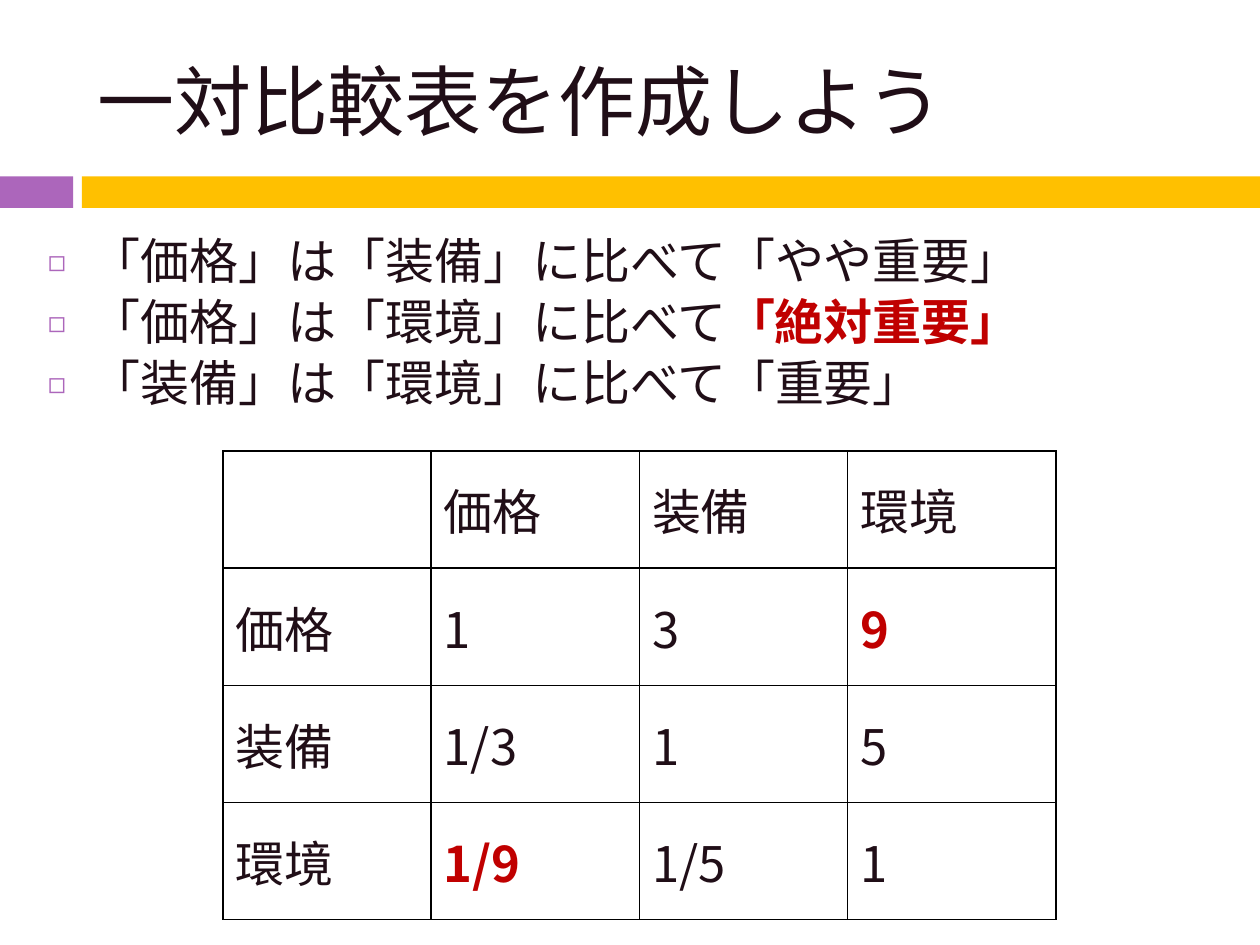
from lxml import etree
from pptx import Presentation
from pptx.dml.color import RGBColor
from pptx.enum.shapes import MSO_SHAPE
from pptx.enum.text import MSO_ANCHOR, MSO_AUTO_SIZE, PP_ALIGN
from pptx.oxml.ns import qn
from pptx.util import Inches, Pt

RECTANGLE = MSO_SHAPE.RECTANGLE
MIDDLE, TOP = MSO_ANCHOR.MIDDLE, MSO_ANCHOR.TOP
NO_AUTOFIT = MSO_AUTO_SIZE.NONE
LEFT = PP_ALIGN.LEFT
FONT = "Noto Sans CJK JP"
COLORS = {"text": "200E17", "emphasis": "C00000", "purple": "AC66BB",
          "gold": "FFC000", "border": "000000"}
TITLE = "一対比較表を作成しよう"
# Each statement is a plain part and an emphasised part.
STATEMENTS = [
    ("「価格」は「装備」に比べて「やや重要」", ""),
    ("「価格」は「環境」に比べて", "「絶対重要」"),
    ("「装備」は「環境」に比べて「重要」", ""),
]
COMPARISONS = [
    ["", "価格", "装備", "環境"],
    ["価格", "1", "3", "9"],
    ["装備", "1/3", "1", "5"],
    ["環境", "1/9", "1/5", "1"],
]
EMPHASISED_VALUES = {"9", "1/9"}


def set_format(target, values):
    for name, value in values.items():
        setattr(target, name, value)


def add_child(parent, tag, **attributes):
    return etree.SubElement(parent, qn(tag), attributes)


def place(shape, left, top, width, height):
    set_format(shape, {"left": Inches(left), "top": Inches(top),
                       "width": Inches(width), "height": Inches(height)})


def add_run(paragraph, text, size, emphasised=False):
    run = paragraph.add_run()
    run.text = text
    set_format(run.font, {"name": FONT, "size": Pt(size), "bold": emphasised})
    color = COLORS["emphasis" if emphasised else "text"]
    run.font.color.rgb = RGBColor.from_string(color)
    add_child(run.font._element, "a:ea", typeface=FONT)


def add_bar(slide, left, width, color):
    bar = slide.shapes.add_shape(RECTANGLE, Inches(left), Inches(1.4),
                                 Inches(width), Inches(0.25))
    bar.shadow.inherit = False
    bar.fill.solid()
    bar.fill.fore_color.rgb = RGBColor.from_string(color)
    bar.line.fill.background()


def fill_title(title):
    place(title, 0.67, 0.25, 8.92, 1.08)
    set_format(title.text_frame, {"vertical_anchor": MIDDLE,
                                  "auto_size": NO_AUTOFIT, "word_wrap": True})
    paragraph = title.text_frame.paragraphs[0]
    paragraph.alignment = LEFT
    add_run(paragraph, TITLE, 44)


def set_bullet(paragraph):
    properties = paragraph._p.get_or_add_pPr()
    properties.set("marL", str(Inches(0.35)))
    properties.set("indent", str(-Inches(0.35)))
    bullet_color = add_child(properties, "a:buClr")
    add_child(bullet_color, "a:srgbClr", val=COLORS["purple"])
    add_child(properties, "a:buSzPct", val="60000")
    add_child(properties, "a:buFont", typeface=FONT)
    add_child(properties, "a:buChar", char="◻")


def fill_statements(body):
    place(body, 0.28, 1.86, 9.45, 5.43)
    frame = body.text_frame
    set_format(frame, {"vertical_anchor": TOP, "auto_size": NO_AUTOFIT,
                       "word_wrap": True})
    for index, parts in enumerate(STATEMENTS):
        paragraph = frame.add_paragraph() if index else frame.paragraphs[0]
        set_format(paragraph, {"space_before": Pt(7), "line_spacing": 0.83})
        set_bullet(paragraph)
        for text, emphasised in zip(parts, (False, True)):
            if text:
                add_run(paragraph, text, 28, emphasised)


def set_borders(cell):
    properties = cell._tc.get_or_add_tcPr()
    for position, side in enumerate(("a:lnL", "a:lnR", "a:lnT", "a:lnB")):
        line = etree.Element(qn(side), w=str(Pt(1)))
        fill = add_child(line, "a:solidFill")
        add_child(fill, "a:srgbClr", val=COLORS["border"])
        properties.insert(position, line)


def add_comparison_table(slide):
    count = len(COMPARISONS)
    table = slide.shapes.add_table(count, count, Inches(1.77), Inches(3.58),
                                   Inches(6.61), Inches(3.72)).table
    set_format(table, {"first_row": False, "horz_banding": False})
    for row, values in enumerate(COMPARISONS):
        for column, value in enumerate(values):
            cell = table.cell(row, column)
            cell.vertical_anchor = MIDDLE
            cell.fill.background()
            set_borders(cell)
            if value:
                add_run(cell.text_frame.paragraphs[0], value, 28,
                        value in EMPHASISED_VALUES)


def main():
    presentation = Presentation()
    set_format(presentation, {"slide_width": Inches(10),
                              "slide_height": Inches(7.5)})
    slide = presentation.slides.add_slide(presentation.slide_layouts[1])
    add_bar(slide, 0, 0.58, COLORS["purple"])
    add_bar(slide, 0.65, 9.35, COLORS["gold"])
    fill_title(slide.shapes.title)
    fill_statements(slide.placeholders[1])
    add_comparison_table(slide)
    presentation.save("out.pptx")


if __name__ == "__main__":
    main()
